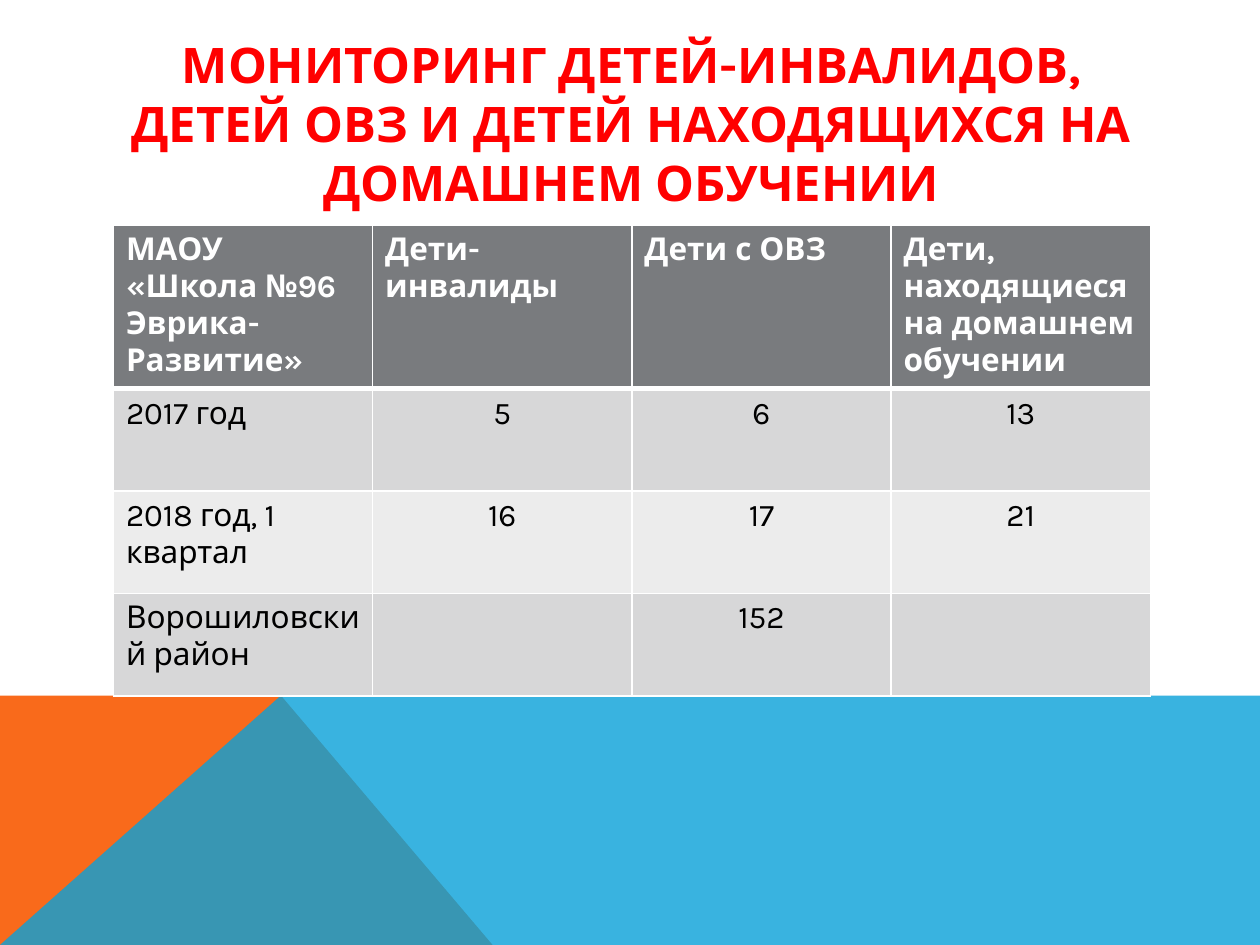
from lxml.etree import SubElement as Sub
from pptx import Presentation
from pptx.dml.color import RGBColor
from pptx.enum.text import MSO_ANCHOR as Anchor, PP_ALIGN as Align
from pptx.oxml.ns import qn
from pptx.util import Inches, Pt

WIDE, HIGH = Inches(10), Inches(7.5)
FONT = "Karla"
ROWS = [
    ["МАОУ «Школа №96 Эврика-Развитие»", "Дети-инвалиды", "Дети с ОВЗ",
     "Дети, находящиеся на домашнем обучении"],
    ["2017 год", "5", "6", "13"],
    ["2018 год, 1 квартал", "16", "17", "21"],
    ["Ворошиловский район", "", "152", ""],
]


def paint(color, tone):
    color.rgb = RGBColor.from_string(tone)


def area(x, y, w, h):
    return int(x * WIDE), int(y * HIGH), int(w * WIDE), int(h * HIGH)


def write(frame, text, size=18, tone="000000", bold=False, align=Align.LEFT):
    frame.word_wrap = True
    para = frame.paragraphs[0]
    para.alignment = align
    run = para.add_run()
    run.text = text
    font = run.font
    font.name, font.size, font.bold = FONT, Pt(size), bold
    paint(font.color, tone)


def draw(slide, box, points, tone, alpha=None):
    x, y, w, h = box
    spots = [(x + u * w, y + v * h) for u, v in points]
    pen = slide.shapes.build_freeform(*spots[0], scale=1.0)
    pen.add_line_segments(spots[1:], close=True)
    shape = pen.convert_to_shape()
    shape.shadow.inherit = False
    shape.line.fill.background()
    shape.fill.solid()
    paint(shape.fill.fore_color, tone)
    if alpha:
        color = shape.fill._xPr.find(qn("a:solidFill"))[0]
        Sub(color, qn("a:alpha"), val=str(alpha * 1000))


def add_base(slide, box):
    peak = 0.223
    draw(slide, box, [(0, 1), (0, 0), (peak, 0), (0.391, 1)], "F96A1B")
    draw(slide, box, [(0, 1), (peak, 0), (1, 0), (1, 1)], "08A1D9", 80)


def add_title(slide, box):
    frame = slide.shapes.add_textbox(*box).text_frame
    frame.vertical_anchor = Anchor.MIDDLE
    write(frame, "МОНИТОРИНГ ДЕТЕЙ-ИНВАЛИДОВ, ДЕТЕЙ ОВЗ И ДЕТЕЙ "
          "НАХОДЯЩИХСЯ НА ДОМАШНЕМ ОБУЧЕНИИ",
          size=28, tone="FF0000", bold=True, align=Align.CENTER)


def edge(cell, **sides):
    props = cell._tc.get_or_add_tcPr()
    for spot, (side, width) in enumerate(sides.items()):
        line = props.makeelement(qn(f"a:ln{side}"), {"w": str(Pt(width))})
        fill = Sub(line, qn("a:solidFill"))
        Sub(fill, qn("a:srgbClr"), val="FFFFFF")
        props.insert(spot, line)


def add_grid(slide, box):
    count = len(ROWS[0])
    table = slide.shapes.add_table(len(ROWS), count, *box).table
    head = int(box[3] * 0.342)
    for col in table.columns:
        col.width = box[2] // count
    for r, texts in enumerate(ROWS):
        top = r == 0
        table.rows[r].height = head if top else (box[3] - head) // (len(ROWS) - 1)
        for c, text in enumerate(texts):
            cell = table.cell(r, c)
            cell.fill.solid()
            paint(cell.fill.fore_color,
                  "797B7E" if top else ("ECECEC", "D7D7D8")[r % 2])
            edge(cell, L=1, R=1, T=3 if r == 1 else 1, B=3 if top else 1)
            if text:
                write(cell.text_frame, text, bold=top,
                      tone="FFFFFF" if top else "000000",
                      align=Align.LEFT if top or c == 0 else Align.CENTER)


def main():
    deck = Presentation()
    deck.slide_width, deck.slide_height = WIDE, HIGH
    slide = deck.slides.add_slide(deck.slide_layouts[6])
    add_base(slide, area(0, 0.736, 1, 0.264))
    add_title(slide, area(0.09, 0.03, 0.822, 0.2))
    add_grid(slide, area(0.09, 0.238, 0.823, 0.494))
    deck.save("out.pptx")


if __name__ == "__main__":
    main()
